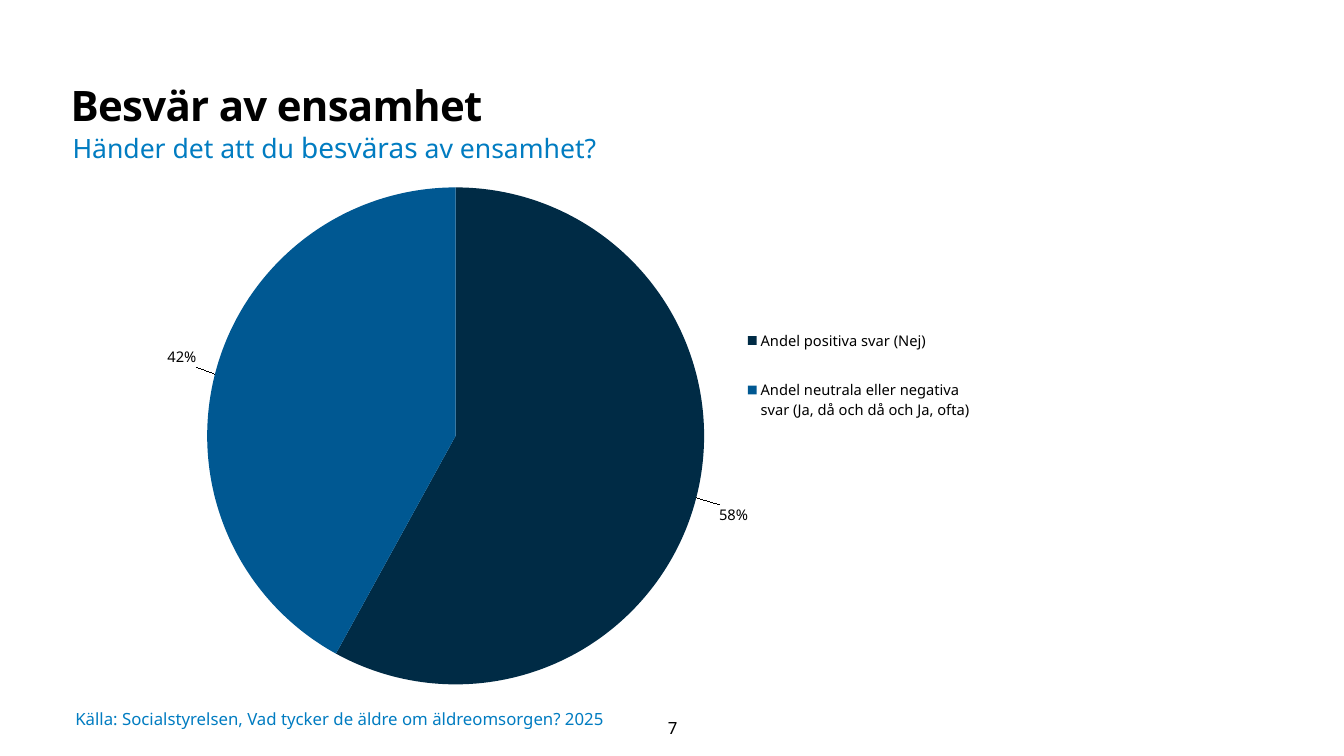
from lxml import etree
from pptx import Presentation
from pptx.chart.data import CategoryChartData
from pptx.dml.color import RGBColor
from pptx.enum.chart import XL_CHART_TYPE, XL_LABEL_POSITION, XL_LEGEND_POSITION
from pptx.enum.text import MSO_ANCHOR, PP_ALIGN
from pptx.oxml import parse_xml
from pptx.util import Cm, Pt

FONT = "Noto Sans"
COLORS = {"text": "000000", "accent": "017CC1", "positive": "002B45", "negative": "005892"}
CHART_NS = "http://schemas.openxmlformats.org/drawingml/2006/chart"
ANSWERS = [
    # label, percent, colour, shift of the percent label
    ("Andel positiva svar (Nej)", 58, "positive", (0.02, 0.01)),
    ("Andel neutrala eller negativa svar (Ja, då och då och Ja, ofta)", 42, "negative",
     (-0.015, -0.01)),
]


def set_font(font, size, color="text", bold=False):
    font.name = FONT
    font.size = Pt(size)
    font.bold = bold
    font.color.rgb = RGBColor.from_string(COLORS[color])


def add_text(slide, box, text, size, color="text", bold=False, align=PP_ALIGN.LEFT,
             anchor=MSO_ANCHOR.TOP, margins=(0.25, 0.13, 0.25, 0.13), line_spacing=1.0,
             tracking=0):
    """Add one paragraph; text is a string or a list of (string, size) spans."""
    frame = slide.shapes.add_textbox(*map(Cm, box)).text_frame
    frame.word_wrap = True
    frame.vertical_anchor = anchor
    (frame.margin_left, frame.margin_top,
     frame.margin_right, frame.margin_bottom) = map(Cm, margins)
    para = frame.paragraphs[0]
    para.alignment = align
    para.line_spacing = line_spacing
    for words, span_size in [(text, size)] if isinstance(text, str) else text:
        span = para.add_run()
        span.text = words
        set_font(span.font, span_size, color, bold)
        if tracking:
            span.font._element.set("spc", str(tracking))


def make_layout(x, y, width=None, height=None, inner=False):
    """Return a manual chart layout in fractions of the chart's size."""
    layout = parse_xml(f'<c:layout xmlns:c="{CHART_NS}"><c:manualLayout/></c:layout>')
    settings = [("layoutTarget", "inner")] if inner else []
    if width:
        settings += [("xMode", "edge"), ("yMode", "edge")]
    settings += [("x", x), ("y", y)]
    if width:
        settings += [("w", width), ("h", height)]
    for tag, value in settings:
        etree.SubElement(layout[0], f"{{{CHART_NS}}}{tag}").set("val", str(value))
    return layout


def replace_layout(parent, layout, index):
    for old in parent.findall(f"{{{CHART_NS}}}layout"):
        parent.remove(old)
    parent.insert(index, layout)


def add_heading(slide, left, top):
    add_text(slide, (left + 0.2, top, 27, 1.24), "Besvär av ensamhet", 30, bold=True,
             margins=(0, 0, 0.25, 0.13), line_spacing=1.1, tracking=-50)
    question = [("Händer det att du ", 19), ("besväras", 20), (" av ensamhet?", 19)]
    add_text(slide, (left, top + 1.27, 25.78, 1.12), question, 19, "accent")


def add_answer_pie(slide, box):
    data = CategoryChartData()
    data.categories = [label for label, *_ in ANSWERS]
    data.add_series("Series 1", [percent for _, percent, *_ in ANSWERS])
    chart = slide.shapes.add_chart(XL_CHART_TYPE.PIE, *map(Cm, box), data).chart
    set_font(chart.font, 10)
    chart.has_title = False
    chart.has_legend = True
    chart.legend.position = XL_LEGEND_POSITION.RIGHT
    chart.legend.include_in_layout = False
    set_font(chart.legend.font, 10.5)
    replace_layout(chart.legend._element, make_layout(0.725, 0.26, 0.27, 0.27), 1)
    replace_layout(chart._chartSpace.chart.plotArea,
                   make_layout(0.093, 0.053, 0.585, 0.905, inner=True), 0)

    series = chart.plots[0].series[0]
    labels = series.data_labels
    labels.show_value = False
    labels.show_percentage = True
    labels.position = XL_LABEL_POSITION.OUTSIDE_END
    set_font(labels.font, 10.5)
    for index, (_, _, color, shift) in enumerate(ANSWERS):
        point = series.points[index]
        point.format.fill.solid()
        point.format.fill.fore_color.rgb = RGBColor.from_string(COLORS[color])
        set_font(point.data_label.font, 10.5)
        point.data_label.position = XL_LABEL_POSITION.OUTSIDE_END
        label = labels._element.findall(f"{{{CHART_NS}}}dLbl")[index]
        label.find(f"{{{CHART_NS}}}showVal").set("val", "0")
        label.find(f"{{{CHART_NS}}}showPercent").set("val", "1")
        replace_layout(label, make_layout(*shift), 1)


def add_footer(slide, left, top):
    add_text(slide, (left, top, 15, 0.74),
             "Källa: Socialstyrelsen, Vad tycker de äldre om äldreomsorgen? 2025",
             12, "accent", anchor=MSO_ANCHOR.MIDDLE, margins=(0, 0, 0, 0))
    add_text(slide, (left + 13.75, top + 0.08, 2.6, 1.02), "7", 12,
             align=PP_ALIGN.CENTER, anchor=MSO_ANCHOR.MIDDLE)


def main():
    deck = Presentation()
    deck.slide_width, deck.slide_height = Cm(33.87), Cm(19.05)
    slide = deck.slides.add_slide(deck.slide_layouts[6])
    add_heading(slide, 1.58, 1.88)
    add_answer_pie(slide, (3.23, 3.99, 21.41, 13.84))
    add_footer(slide, 1.9, 17.75)
    deck.save("out.pptx")


if __name__ == "__main__":
    main()
